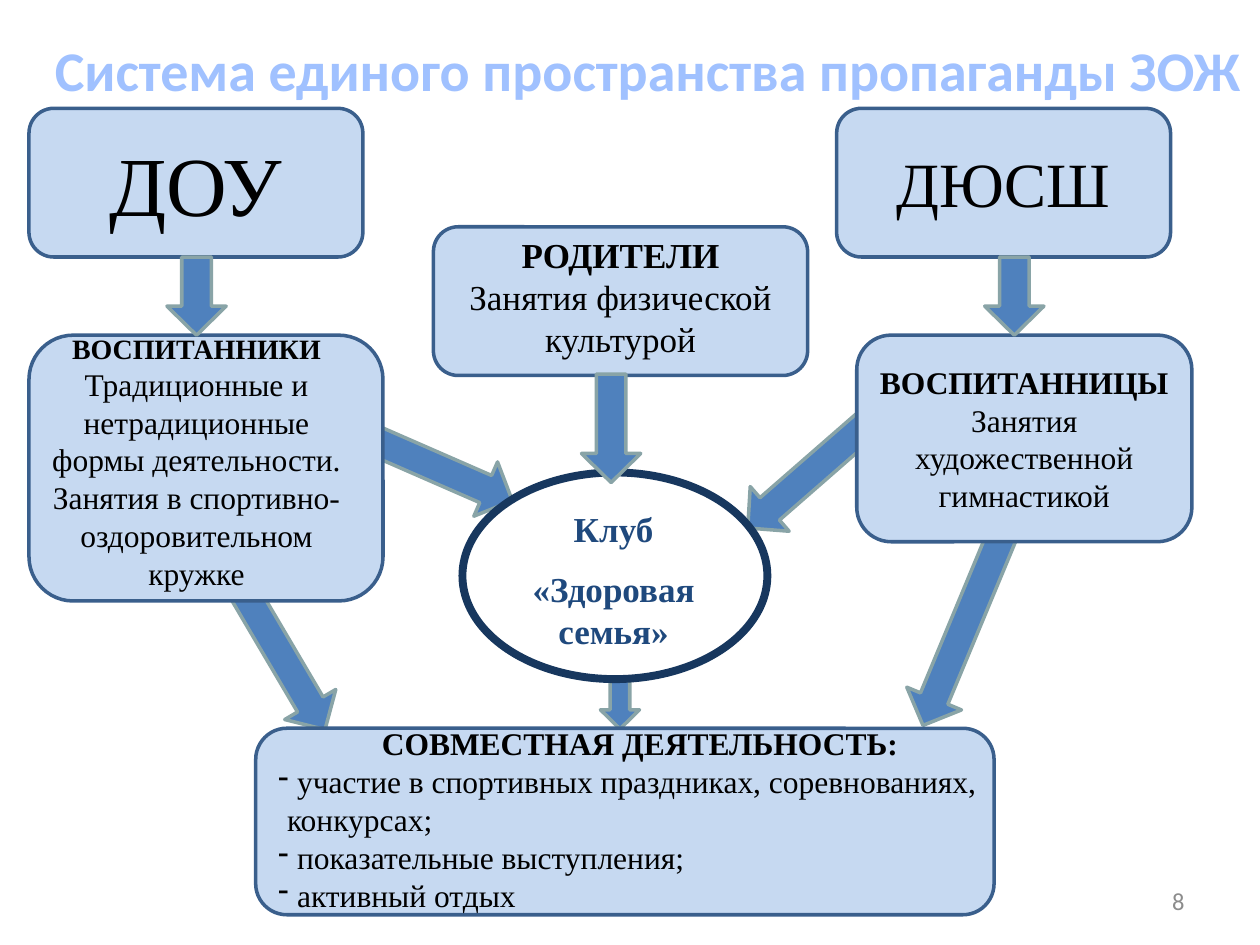
from lxml import etree
from pptx import Presentation
from pptx.dml.color import RGBColor
from pptx.enum.shapes import MSO_SHAPE
from pptx.enum.text import MSO_ANCHOR, PP_ALIGN
from pptx.oxml.ns import qn
from pptx.util import Inches, Pt

ARROW, ROUNDED, OVAL = MSO_SHAPE.RIGHT_ARROW, MSO_SHAPE.ROUNDED_RECTANGLE, MSO_SHAPE.OVAL
LEFT, CENTER, RIGHT = PP_ALIGN.LEFT, PP_ALIGN.CENTER, PP_ALIGN.RIGHT
TOP, MIDDLE = MSO_ANCHOR.TOP, MSO_ANCHOR.MIDDLE

TITLE = "Система единого пространства пропаганды ЗОЖ"
SERIF, SANS = "Times New Roman", "Calibri"
BOX = {"fill": "C6D9F1", "line": "3A5F8C", "width": 2}
CLUB = {"fill": "FFFFFF", "line": "17375E", "width": 4.5}
FLOW = {"fill": "4F81BD", "line": "89A4A7", "width": 2}
ARROW_HEIGHT = 0.47

# Arrows: centre x, centre y, length, rotation, height
ARROWS_BEHIND = [
    (2.25, 5.23, 1.3, 59.5, ARROW_HEIGHT),
    (7.64, 5.0, 1.64, 112.6, ARROW_HEIGHT),
    (4.92, 5.51, 0.55, 90, 0.31),
    (3.53, 3.74, 1.17, 23.6, ARROW_HEIGHT),
    (6.44, 3.75, 1.34, 138.9, ARROW_HEIGHT),
]
ARROWS_IN_FRONT = [
    (1.56, 2.35, 0.62, 90, ARROW_HEIGHT),
    (8.05, 2.35, 0.62, 90, ARROW_HEIGHT),
    (4.85, 3.4, 0.86, 90, ARROW_HEIGHT),
]

# Boxes: preset, place, style
KINDERGARTEN = (ROUNDED, (0.23, 0.86, 2.65, 1.18), BOX)
SPORTS_SCHOOL = (ROUNDED, (6.64, 0.86, 2.65, 1.18), BOX)
GYMNASTS = (ROUNDED, (6.8, 2.66, 2.66, 1.64), BOX)
PLAIN_BOXES = [
    (OVAL, (3.67, 3.75, 2.42, 1.64), CLUB),
    (ROUNDED, (0.23, 2.66, 2.81, 2.11), BOX),
    (ROUNDED, (3.67, 1.8, 2.97 - 0.23, 1.18), BOX),
    (ROUNDED, (2.03, 5.78, 5.86, 1.48), BOX),
]
PLAIN_BOXES[2] = (ROUNDED, (3.44, 1.8, 2.97, 1.18), BOX)

# Paragraphs: text and its format where it differs from centred 18 pt black serif
BOX_TEXTS = [
    (KINDERGARTEN, [("ДОУ", {"size": 48})]),
    (SPORTS_SCHOOL, [("ДЮСШ", {"size": 36})]),
    (GYMNASTS, [
        ("ВОСПИТАННИЦЫ", {"bold": True}),
        ("Занятия художественной гимнастикой", {}),
    ]),
]
CLUB_NAME = {"size": 20, "bold": True, "color": "1F497D"}
DASHED = {"align": LEFT, "bullet": "-", "indent": 0.15}
LABELS = [
    ((3.75, 3.98, 2.24, 1.28), TOP, [
        ("Клуб", CLUB_NAME),
        ("«Здоровая семья»", {**CLUB_NAME, "before": 10}),
    ]),
    ((0.23, 2.58, 2.66, 2.49), TOP, [
        ("ВОСПИТАННИКИ", {"size": 16, "bold": True}),
        ("Традиционные и нетрадиционные формы деятельности.", {}),
        ("Занятия в спортивно-оздоровительном кружке", {}),
    ]),
    ((2.11, 5.7, 5.94, 1.62), TOP, [
        ("СОВМЕСТНАЯ ДЕЯТЕЛЬНОСТЬ:", {"bold": True}),
        ("участие в спортивных праздниках, соревнованиях,", DASHED),
        ("конкурсах;", {"align": LEFT, "indent": 0.07}),
        ("показательные выступления;", DASHED),
        ("активный отдых", DASHED),
    ]),
    ((3.52, 1.8, 2.81, 1.11), TOP, [
        ("РОДИТЕЛИ", {"size": 20, "bold": True}),
        ("Занятия физической культурой", {"size": 20}),
    ]),
    ((7.17, 6.95, 2.33, 0.4), MIDDLE, [
        ("8", {"size": 14, "font": SANS, "color": "8C8C8C", "align": RIGHT}),
    ]),
]


def rgb(value):
    return RGBColor.from_string(value)


def add_figure(slide, preset, place, style):
    figure = slide.shapes.add_shape(preset, *map(Inches, place))
    figure.shadow.inherit = False
    figure.fill.solid()
    figure.fill.fore_color.rgb = rgb(style["fill"])
    figure.line.color.rgb = rgb(style["line"])
    figure.line.width = Pt(style["width"])
    return figure


def add_arrows(slide, arrows):
    for x, y, length, rotation, height in arrows:
        place = (x - length / 2, y - height / 2, length, height)
        arrow = add_figure(slide, ARROW, place, FLOW)
        arrow.adjustments[1] = 0.49
        arrow.rotation = rotation


def set_indent(paragraph, indent, bullet):
    """Indent a paragraph, hanging its bullet if it has one."""
    properties = paragraph._p.get_or_add_pPr()
    properties.set("marL", str(Inches(indent)))
    properties.set("indent", str(-Inches(indent) if bullet else 0))
    if bullet:
        etree.SubElement(properties, qn("a:buChar")).set("char", bullet)


def write(frame, paragraphs, anchor, wrap=True):
    frame.word_wrap = wrap
    frame.vertical_anchor = anchor
    for number, (text, look) in enumerate(paragraphs):
        paragraph = frame.add_paragraph() if number else frame.paragraphs[0]
        paragraph.text = text
        if "indent" in look:
            set_indent(paragraph, look["indent"], look.get("bullet"))
        paragraph.alignment = look.get("align", CENTER)
        if "before" in look:
            paragraph.space_before = Pt(look["before"])
        font = paragraph.runs[0].font
        font.color.rgb = rgb(look.get("color", "000000"))
        values = {
            "name": look.get("font", SERIF),
            "size": Pt(look.get("size", 18)),
            "bold": look.get("bold", False),
        }
        for attribute, value in values.items():
            setattr(font, attribute, value)


def main():
    deck = Presentation()
    deck.slide_width, deck.slide_height = Inches(10), Inches(7.5)
    slide = deck.slides.add_slide(deck.slide_layouts[5])

    title = slide.shapes.title
    title.left, title.top, title.width, title.height = map(Inches, (0.29, 0.23, 9.71, 0.64))
    title_look = {"size": 32, "bold": True, "font": SANS, "color": "A0C1FF"}
    write(title.text_frame, [(TITLE, title_look)], TOP, wrap=False)

    add_arrows(slide, ARROWS_BEHIND)
    for box, paragraphs in BOX_TEXTS:
        write(add_figure(slide, *box).text_frame, paragraphs, MIDDLE)
    for box in PLAIN_BOXES:
        add_figure(slide, *box)
    add_arrows(slide, ARROWS_IN_FRONT)
    for place, anchor, paragraphs in LABELS:
        label = slide.shapes.add_textbox(*map(Inches, place))
        write(label.text_frame, paragraphs, anchor)

    deck.save("out.pptx")


if __name__ == "__main__":
    main()
